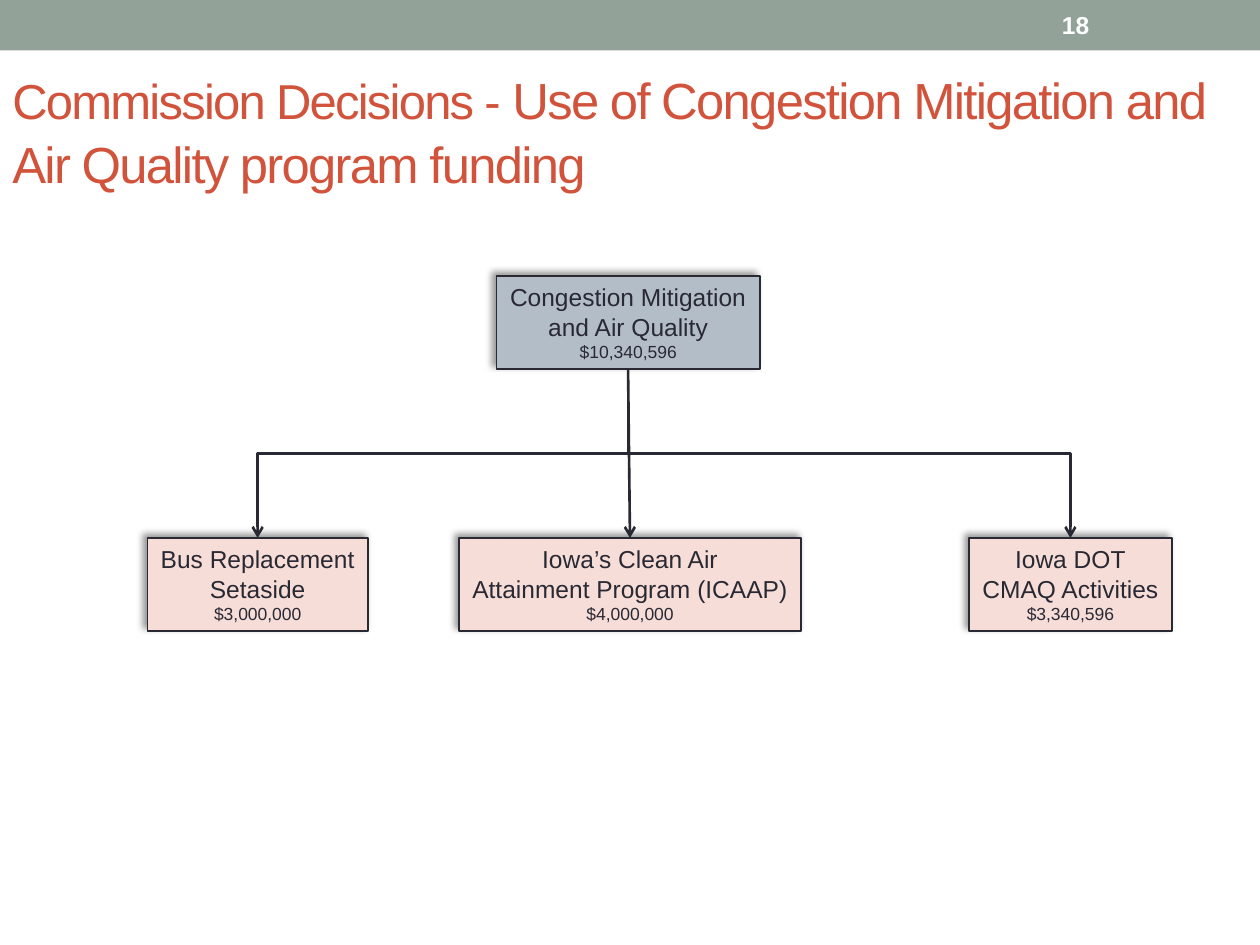
from dataclasses import dataclass

from pptx import Presentation
from pptx import util as u
from pptx.dml.color import RGBColor
from pptx.enum import shapes, text
from pptx.oxml import parse_xml
from pptx.oxml.ns import nsdecls

COLORS = {
    "band": "93A299",
    "title": "D2533C",
    "ink": "292934",
    "source": "B3BDC8",
    "use": "F6DDD8",
    "white": "FFFFFF",
    "shadow": "000000",
}
BOX_HEIGHT = 0.74
SHADOW = (
    f'<a:effectLst {nsdecls("a")}><a:outerShdw blurRad="{u.Pt(4)}" dist="{u.Pt(3)}" '
    f'dir="13500000" rotWithShape="0"><a:srgbClr val="{COLORS["shadow"]}">'
    '<a:alpha val="40000"/></a:srgbClr></a:outerShdw></a:effectLst>'
)


@dataclass(frozen=True)
class FundingBox:
    left: float
    top: float
    width: float
    fill: str
    name_lines: tuple[str, str]
    amount: str


SOURCE = FundingBox(3.94, 2.19, 2.09, "source",
                    ("Congestion Mitigation", "and Air Quality"), "$10,340,596")
USES = (
    FundingBox(1.17, 4.27, 1.75, "use", ("Bus Replacement", "Setaside"), "$3,000,000"),
    FundingBox(3.64, 4.27, 2.72, "use",
               ("Iowa’s Clean Air", "Attainment Program (ICAAP)"), "$4,000,000"),
    FundingBox(7.69, 4.27, 1.61, "use", ("Iowa DOT", "CMAQ Activities"), "$3,340,596"),
)


def rgb(name: str) -> RGBColor:
    return RGBColor.from_string(COLORS[name])


def write(paragraph, words: str, *, size: float, color: str, bold: bool = False,
          align=text.PP_ALIGN.LEFT, tracking: int = 0) -> None:
    paragraph.alignment = align
    run = paragraph.add_run()
    run.text = words
    run.font.name = "Arial"
    run.font.size = u.Pt(size)
    run.font.bold = bold
    run.font.color.rgb = rgb(color)
    if tracking:
        run.font._element.set("spc", str(tracking * 100))


def add_text_frame(slide, left: float, top: float, width: float, height: float, anchor):
    frame = slide.shapes.add_textbox(
        u.Inches(left), u.Inches(top), u.Inches(width), u.Inches(height)).text_frame
    frame.word_wrap = True
    frame.vertical_anchor = anchor
    return frame


def add_rectangle(slide, left: float, top: float, width: float, height: float, fill: str):
    shape = slide.shapes.add_shape(
        shapes.MSO_SHAPE.RECTANGLE,
        u.Inches(left), u.Inches(top), u.Inches(width), u.Inches(height))
    shape.shadow.inherit = False
    shape.fill.solid()
    shape.fill.fore_color.rgb = rgb(fill)
    shape.line.fill.background()
    return shape


def add_funding_box(slide, box: FundingBox):
    shape = add_rectangle(slide, box.left, box.top, box.width, BOX_HEIGHT, box.fill)
    shape.line.color.rgb = rgb("ink")
    shape.line.width = u.Pt(1)
    properties = shape._element.spPr
    properties.remove(properties.find("{*}effectLst"))
    properties.append(parse_xml(SHADOW))
    frame = shape.text_frame
    frame.word_wrap = False
    frame.auto_size = text.MSO_AUTO_SIZE.SHAPE_TO_FIT_TEXT
    frame.vertical_anchor = text.MSO_ANCHOR.TOP
    lines = [(line, 14) for line in box.name_lines] + [(box.amount, 10)]
    for index, (words, size) in enumerate(lines):
        paragraph = frame.add_paragraph() if index else frame.paragraphs[0]
        write(paragraph, words, size=size, color="ink", align=text.PP_ALIGN.CENTER)
    return shape


def add_arrow(slide, source, target, bent: bool) -> None:
    kind = shapes.MSO_CONNECTOR.ELBOW if bent else shapes.MSO_CONNECTOR.STRAIGHT
    start_x, start_y = source.left + source.width // 2, source.top + source.height
    end_x, end_y = target.left + target.width // 2, target.top
    connector = slide.shapes.add_connector(kind, start_x, start_y, end_x, end_y)
    connector.begin_connect(source, 2)
    connector.end_connect(target, 0)
    connector.line.color.rgb = rgb("ink")
    connector.line.width = u.Pt(1.5)
    connector.line._get_or_add_ln().append(
        parse_xml(f'<a:tailEnd {nsdecls("a")} type="arrow"/>'))
    properties = connector._element.spPr
    properties.append(parse_xml(f'<a:effectLst {nsdecls("a")}/>'))
    if bent:
        rise, span = end_y - start_y, abs(end_x - start_x)
        connector.left = (start_x + end_x - rise) // 2
        connector.top = (start_y + end_y - span) // 2
        connector.width, connector.height = rise, span
        rightward = end_x > start_x
        properties.xfrm.set("rot", "16200000" if rightward else "5400000")
        properties.xfrm.set("flipH", "1" if rightward else "0")


def main() -> None:
    """Build the funding slide and save it."""
    presentation = Presentation()
    presentation.slide_width, presentation.slide_height = u.Inches(10), u.Inches(7.5)
    slide = presentation.slides.add_slide(presentation.slide_layouts[6])

    add_rectangle(slide, 0, 0, 10, 0.4, "band")
    title = add_text_frame(slide, 0, 0.47, 10, 1.25, text.MSO_ANCHOR.TOP).paragraphs[0]
    title.line_spacing = 1.05
    write(title, "Commission Decisions - ", size=28, color="title", tracking=-1)
    write(title, "Use of Congestion Mitigation and Air Quality program funding",
          size=29, color="title", tracking=-1)

    source = add_funding_box(slide, SOURCE)
    for use in USES:
        target = add_funding_box(slide, use)
        centered = abs(use.left + use.width / 2 - SOURCE.left - SOURCE.width / 2) < 0.1
        add_arrow(slide, source, target, bent=not centered)

    number = add_text_frame(slide, 8.33, 0.02, 1.17, 0.36, text.MSO_ANCHOR.MIDDLE)
    write(number.paragraphs[0], "18", size=14, color="white", bold=True)
    presentation.save("out.pptx")


if __name__ == "__main__":
    main()
